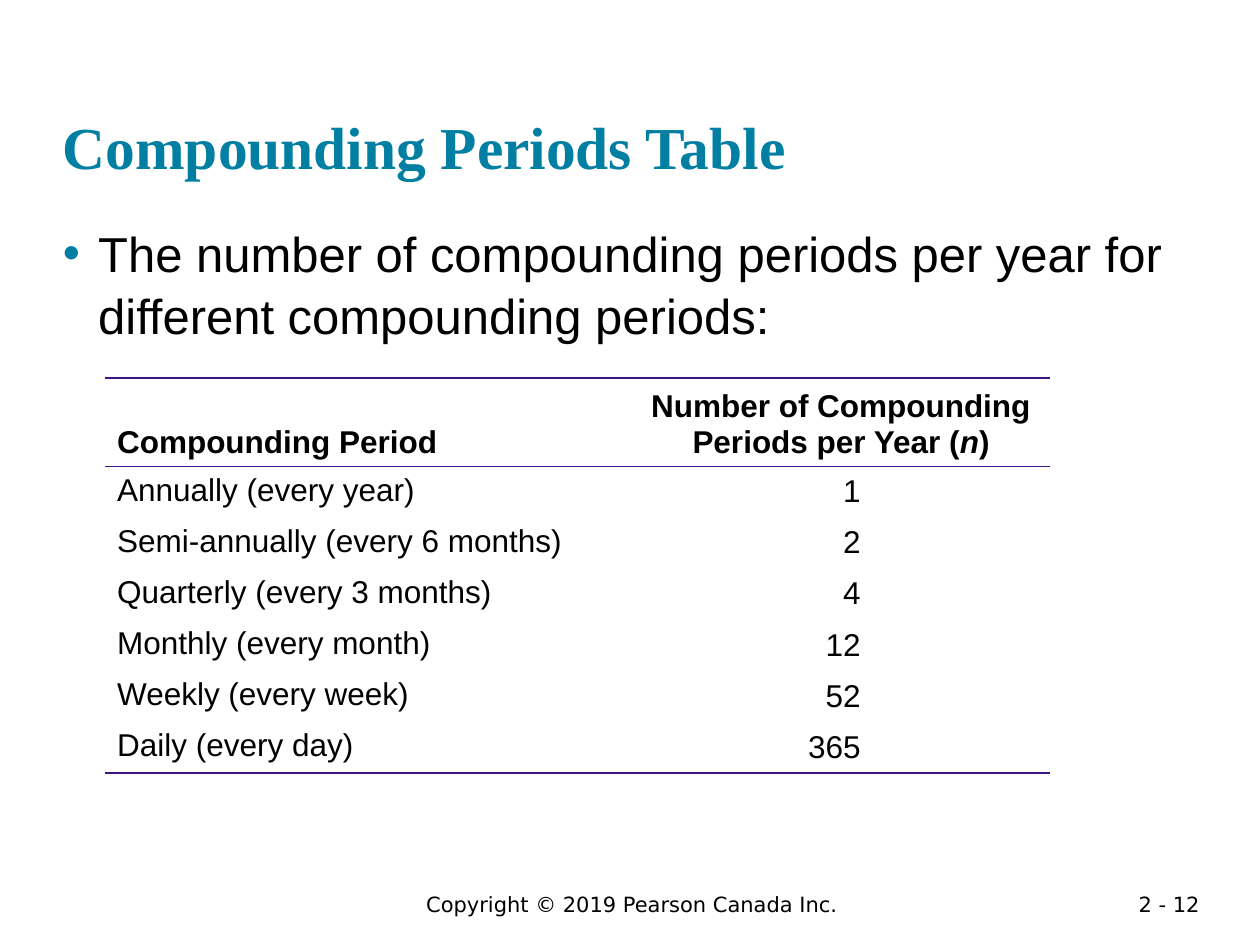
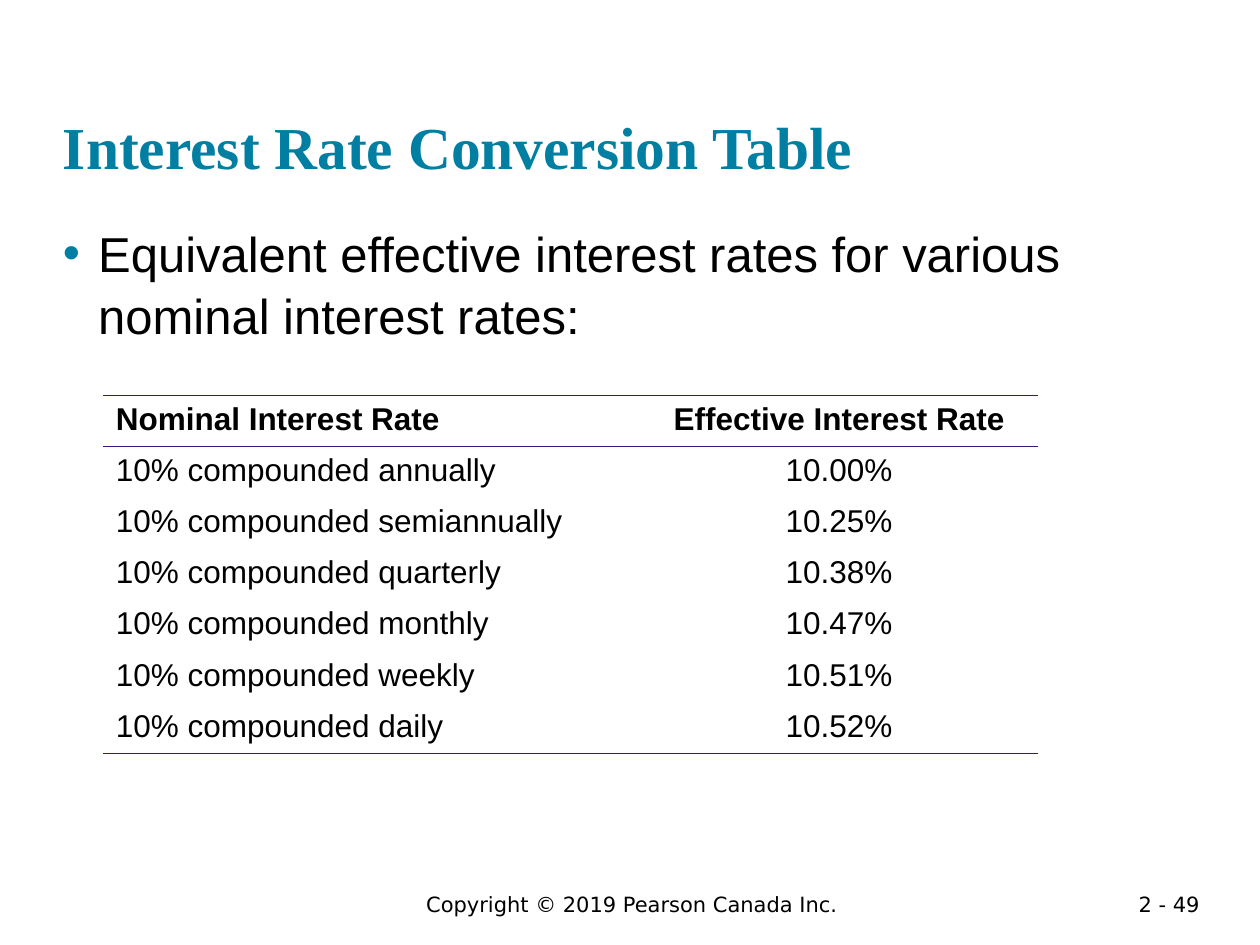
from dataclasses import dataclass

from lxml.etree import SubElement
from pptx import Presentation
from pptx.dml.color import RGBColor
from pptx.enum.text import MSO_ANCHOR, PP_ALIGN
from pptx.oxml.ns import qn
from pptx.slide import Slide
from pptx.table import Table, _Cell
from pptx.text.text import TextFrame, _Paragraph
from pptx.util import Emu, Inches, Pt

SLIDE_WIDTH, SLIDE_HEIGHT = Inches(10), Inches(7.5)
TEAL, PURPLE, BLACK = "007FA3", "3C1581", "000000"
COPYRIGHT = "Copyright © 2019 Pearson Canada Inc."
NO_TABLE_STYLE = "{2D5ABB26-0587-4C30-8999-92F81FD0307C}"
INDENT = Inches(0.28)


@dataclass(frozen=True)
class Box:
    """Left, top, width and height in percent of the slide's size."""
    left: float
    top: float
    width: float
    height: float


@dataclass(frozen=True)
class TextStyle:
    font: str
    size: float
    color: str = BLACK
    bold: bool = False
    align: PP_ALIGN = PP_ALIGN.LEFT


@dataclass(frozen=True)
class RateTable:
    """A two-column table, its measures in percent of the slide's size."""
    left: float
    top: float
    columns: tuple[float, float]
    header_height: float
    header: tuple[tuple[str, ...], tuple[str, ...]]
    rows: tuple[tuple[str, str], ...]
    header_anchor: MSO_ANCHOR = MSO_ANCHOR.TOP
    value_anchor: MSO_ANCHOR = MSO_ANCHOR.TOP
    value_align: PP_ALIGN = PP_ALIGN.CENTER
    value_margin: float = 0.1
    row_height: float = 5.41


@dataclass(frozen=True)
class TableSlide:
    title: str
    lead: str
    page: str
    table: RateTable


TITLE_BOX = Box(5, 3.2, 90, 16)
LEAD_BOX = Box(5, 23.33, 90, 14.4)
COPYRIGHT_BOX = Box(16.4, 93.73, 67.5, 4)
PAGE_BOX = Box(86.2, 93.73, 10, 2.93)

TITLE = TextStyle("Times New Roman", 34, TEAL, True)
LEAD = TextStyle("Arial", 28)
COPYRIGHT_LINE = TextStyle("DejaVu Sans", 12, align=PP_ALIGN.CENTER)
PAGE_NUMBER = TextStyle("DejaVu Sans", 12, align=PP_ALIGN.RIGHT)

SLIDES = (
    TableSlide(
        "Compounding Periods Table",
        "The number of compounding periods per year for different compounding periods:",
        "2 - 12",
        RateTable(
            8.3, 40, (41.9, 33.1), 9.33,
            (("Compounding Period",),
             ("Number of Compounding Periods per Year (", "n", ")")),
            (("Annually (every year)", "1"),
             ("Semi-annually (every 6 months)", "2"),
             ("Quarterly (every 3 months)", "4"),
             ("Monthly (every month)", "12"),
             ("Weekly (every week)", "52"),
             ("Daily (every day)", "365")),
            header_anchor=MSO_ANCHOR.BOTTOM,
            value_anchor=MSO_ANCHOR.MIDDLE,
            value_align=PP_ALIGN.RIGHT,
            value_margin=1.5,
        ),
    ),
    TableSlide(
        "Interest Rate Conversion Table",
        "Equivalent effective interest rates for various nominal interest rates:",
        "2 - 49",
        RateTable(
            8.2, 41.87, (42.6, 31.6), 5.41,
            (("Nominal Interest Rate",), ("Effective Interest Rate",)),
            (("10% compounded annually", "10.00%"),
             ("10% compounded semiannually", "10.25%"),
             ("10% compounded quarterly", "10.38%"),
             ("10% compounded monthly", "10.47%"),
             ("10% compounded weekly", "10.51%"),
             ("10% compounded daily", "10.52%")),
        ),
    ),
)


def across(percent: float) -> Emu:
    return Emu(round(SLIDE_WIDTH * percent / 100))


def down(percent: float) -> Emu:
    return Emu(round(SLIDE_HEIGHT * percent / 100))


def rgb(color: str) -> RGBColor:
    return RGBColor.from_string(color)


def format_paragraph(paragraph: _Paragraph, style: TextStyle) -> None:
    paragraph.alignment = style.align
    for run in paragraph.runs:
        run.font.name = style.font
        run.font.size = Pt(style.size)
        run.font.bold = style.bold
        run.font.color.rgb = rgb(style.color)


def add_text(slide: Slide, box: Box, text: str, style: TextStyle) -> TextFrame:
    frame = slide.shapes.add_textbox(
        across(box.left), down(box.top), across(box.width), down(box.height)
    ).text_frame
    frame.word_wrap = True
    frame.text = text
    format_paragraph(frame.paragraphs[0], style)
    return frame


def clear_margins(frame: TextFrame) -> None:
    frame.margin_left = frame.margin_right = 0
    frame.margin_top = frame.margin_bottom = 0


def add_title(slide: Slide, text: str) -> None:
    frame = add_text(slide, TITLE_BOX, text, TITLE)
    clear_margins(frame)
    frame.vertical_anchor = MSO_ANCHOR.BOTTOM


def add_lead(slide: Slide, text: str) -> None:
    frame = add_text(slide, LEAD_BOX, text, LEAD)
    clear_margins(frame)
    paragraph = frame.paragraphs[0]
    paragraph.line_spacing = 1.05
    properties = paragraph._p.get_or_add_pPr()
    properties.set("marL", str(INDENT))
    properties.set("indent", str(-INDENT))
    bullet_color = SubElement(properties, qn("a:buClr"))
    SubElement(bullet_color, qn("a:srgbClr"), val=TEAL)
    SubElement(properties, qn("a:buFont"), typeface="Arial")
    SubElement(properties, qn("a:buChar"), char="•")


def add_rule(cell: _Cell, side: str) -> None:
    """Draw a border on one side of a cell: T for top, B for bottom."""
    line = SubElement(cell._tc.get_or_add_tcPr(), qn(f"a:ln{side}"), w=str(Pt(1)))
    SubElement(SubElement(line, qn("a:solidFill")), qn("a:srgbClr"), val=PURPLE)


def fill_cell(cell: _Cell, parts: tuple[str, ...], style: TextStyle,
              anchor: MSO_ANCHOR, sides: str) -> None:
    """Write the parts of a cell's text, every second one in italics."""
    paragraph = cell.text_frame.paragraphs[0]
    for index, part in enumerate(parts):
        run = paragraph.add_run()
        run.text = part
        run.font.italic = index % 2 == 1
    format_paragraph(paragraph, style)
    cell.vertical_anchor = anchor
    for side in sides:
        add_rule(cell, side)
    cell.fill.background()


def new_table(slide: Slide, content: RateTable) -> Table:
    heights = [content.header_height] + [content.row_height] * len(content.rows)
    table = slide.shapes.add_table(
        len(heights), len(content.columns), across(content.left), down(content.top),
        across(sum(content.columns)), down(sum(heights)),
    ).table
    table.first_row = table.horz_banding = False
    table._tbl.tblPr.find(qn("a:tableStyleId")).text = NO_TABLE_STYLE
    for column, width in zip(table.columns, content.columns):
        column.width = across(width)
    for row, height in zip(table.rows, heights):
        row.height = down(height)
    return table


def add_rate_table(slide: Slide, content: RateTable) -> None:
    table = new_table(slide, content)
    for column, (parts, align) in enumerate(
            zip(content.header, (PP_ALIGN.LEFT, PP_ALIGN.CENTER))):
        fill_cell(table.cell(0, column), parts,
                  TextStyle("Arial", 18, bold=True, align=align),
                  content.header_anchor, "TB")
    for row, (label, value) in enumerate(content.rows, start=1):
        sides = "B" if row == len(content.rows) else ""
        fill_cell(table.cell(row, 0), (label,), TextStyle("Arial", 18),
                  MSO_ANCHOR.TOP, sides)
        value_cell = table.cell(row, 1)
        fill_cell(value_cell, (value,),
                  TextStyle("Arial", 18, align=content.value_align),
                  content.value_anchor, sides)
        value_cell.margin_right = Inches(content.value_margin)


def main() -> None:
    presentation = Presentation()
    presentation.slide_width, presentation.slide_height = SLIDE_WIDTH, SLIDE_HEIGHT
    blank = presentation.slide_layouts[6]
    for content in SLIDES:
        slide = presentation.slides.add_slide(blank)
        add_text(slide, COPYRIGHT_BOX, COPYRIGHT, COPYRIGHT_LINE)
        add_text(slide, PAGE_BOX, content.page, PAGE_NUMBER)
        add_title(slide, content.title)
        add_lead(slide, content.lead)
        add_rate_table(slide, content.table)
    presentation.save("out.pptx")


if __name__ == "__main__":
    main()
